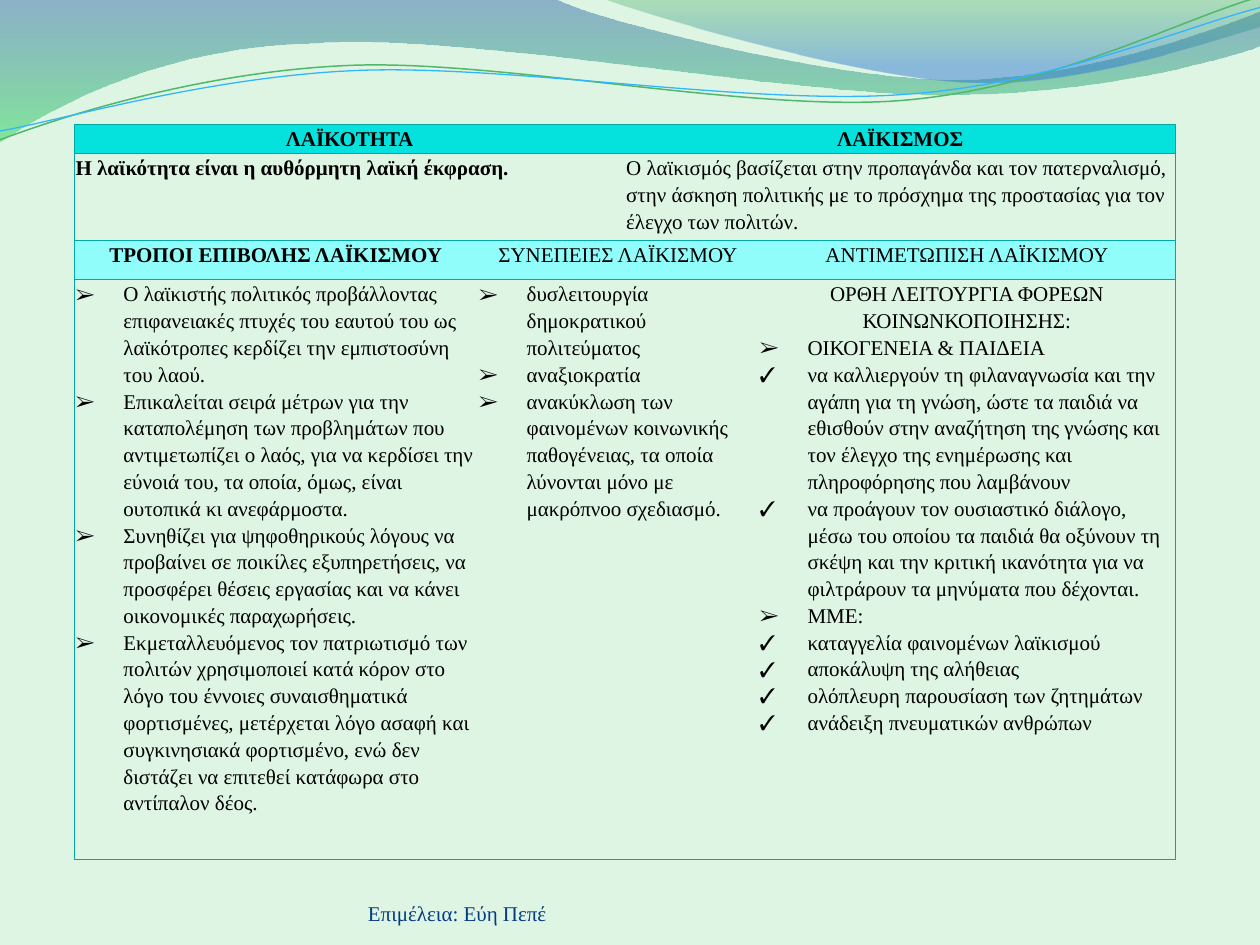
"""Build a slide with a wave header and a table comparing λαϊκότητα and λαϊκισμός."""
from lxml.etree import SubElement
from pptx import Presentation
from pptx.dml.color import RGBColor
from pptx.enum.text import MSO_ANCHOR, PP_ALIGN
from pptx.oxml.ns import qn
from pptx.util import Inches, Pt

FONT = "Times New Roman"
BACKGROUND = RGBColor(0xDE, 0xF5, 0xE4)
BLACK = RGBColor(0x00, 0x00, 0x00)
NAVY = RGBColor(0x07, 0x3B, 0x81)
BORDER = RGBColor(0x01, 0xA8, 0xA4)
HEADER = RGBColor(0x05, 0xE2, 0xDD)
SUBHEADER = RGBColor(0x91, 0xFD, 0xFA)
WAVE_BLUE = RGBColor(0x29, 0x60, 0xA7)
WAVE_LIME = RGBColor(0x35, 0xDA, 0x5E)
WAVE_GREEN = RGBColor(0x36, 0xA7, 0x52)
WAVE_SKY = RGBColor(0x24, 0x72, 0xD3)
LINE_GREEN = RGBColor(0x50, 0xB8, 0x6A)
LINE_BLUE = RGBColor(0x31, 0xB6, 0xFD)


def add_wave(shapes, start, segments, close):
    """Draw line (one point) and cubic (three points) segments as a freeform."""
    builder = shapes.build_freeform(Inches(start[0]), Inches(start[1]), scale=1.0)
    ends = [(Inches(x), Inches(y)) for x, y in (segment[-1] for segment in segments)]
    builder.add_line_segments(ends, close=close)
    shape = builder.convert_to_shape()
    shape.shadow.inherit = False
    for line, segment in zip(list(shape._element.iter(qn("a:lnTo"))), segments):
        if len(segment) == 3:
            curve = line.makeelement(qn("a:cubicBezTo"))
            for x, y in segment:
                SubElement(curve, qn("a:pt"), x=str(Inches(x) - shape.left),
                           y=str(Inches(y) - shape.top))
            line.getparent().replace(line, curve)
    return shape


def format_text(paragraph, text, color=BLACK, bold=False):
    """Write the text of a paragraph with its font."""
    paragraph.text = text
    font_format = {"name": FONT, "size": Pt(12), "bold": bold}
    for name, value in font_format.items():
        setattr(paragraph.font, name, value)
    paragraph.font.color.rgb = color


presentation = Presentation()
presentation.slide_width = Inches(10)
presentation.slide_height = Inches(7.5)
slide = presentation.slides.add_slide(presentation.slide_layouts[6])
slide.background.fill.solid()
slide.background.fill.fore_color.rgb = BACKGROUND

filled_waves = [
    ((0, 0), [
        [(4.4, -0.01)],
        [(4.76, 0.17), (6.64, 0.63), (7.58, 0.63)],
        [(8.53, 0.63), (9.58, 0.26), (10, 0.09)],
        [(10.01, 0.36)],
        [(9.83, 0.44), (8.7, 0.76), (7.46, 0.75)],
        [(6.22, 0.75), (3.82, 0.28), (2.57, 0.34)],
        [(1.29, 0.36), (0.46, 0.83), (-0.01, 1.13)],
    ], [(0, WAVE_BLUE, 45), (1, WAVE_LIME, 55)]),
    ((4.79, -0.01), [
        [(5.09, 0.11), (6.82, 0.62), (7.69, 0.65)],
        [(8.56, 0.69), (9.61, 0.32), (10, 0.21)],
        [(10, 0)],
    ], [(0, WAVE_GREEN, 30), (0.8, WAVE_SKY, 45)]),
]
for start, segments, stops in filled_waves:
    wave = add_wave(slide.shapes, start, segments, True)
    wave.line.fill.background()
    wave.fill.gradient()
    wave.fill.gradient_angle = 270
    for stop, (position, color, opacity) in zip(wave.fill.gradient_stops, stops):
        stop.position = position
        stop.color.rgb = color
    colors = wave.fill._xPr.iter(qn("a:srgbClr"))
    for color_element, (position, color, opacity) in zip(colors, stops):
        SubElement(color_element, qn("a:alpha"), val=str(opacity * 1000))

line_waves = [
    ((0, 1.11), [
        [(0.48, 0.93), (1.58, 0.57), (2.77, 0.52)],
        [(3.95, 0.47), (5.93, 0.89), (7.13, 0.8)],
        [(8.33, 0.71), (9.38, 0.15), (9.98, -0.02)],
    ], LINE_GREEN, 0.85),
    ((0, 1.04), [
        [(0.47, 0.96), (1.64, 0.61), (2.83, 0.56)],
        [(4.03, 0.51), (5.97, 0.84), (7.17, 0.75)],
        [(8.36, 0.67), (9.41, 0.21), (10, 0.06)],
    ], LINE_BLUE, 0.75),
]
for start, segments, color, width in line_waves:
    wave = add_wave(slide.shapes, start, segments, False)
    wave.fill.background()
    wave.line.color.rgb = color
    wave.line.width = Pt(width)

credit = slide.shapes.add_textbox(Inches(2.92), Inches(6.95), Inches(3.67), Inches(0.4))
credit_format = {"word_wrap": True, "vertical_anchor": MSO_ANCHOR.BOTTOM, "margin_left": 0,
                 "margin_right": 0, "margin_top": 0, "margin_bottom": 0}
for name, value in credit_format.items():
    setattr(credit.text_frame, name, value)
format_text(credit.text_frame.paragraphs[0], "Επιμέλεια: Εύη Πεπέ", NAVY)

column_widths = [3.2, 1.17, 1.06, 3.31]
row_heights = [0.2, 0.62, 0.31, 3.99]
row_fills = [HEADER, None, SUBHEADER, None]
merges = [(0, 0, 1), (0, 2, 3), (1, 0, 1), (1, 2, 3), (2, 1, 2), (3, 1, 2)]
table = slide.shapes.add_table(
    4, 4, Inches(0.59), Inches(0.99), Inches(8.74), Inches(sum(row_heights))).table
table.first_row = table.horz_banding = False
for column, width in zip(table.columns, column_widths):
    column.width = Inches(width)
for row, height in zip(table.rows, row_heights):
    row.height = Inches(height)
for row_index, first, last in merges:
    table.cell(row_index, first).merge(table.cell(row_index, last))

cell_margins = {"margin_left": Inches(0.01), "margin_right": Inches(0.01),
                "margin_top": 0, "margin_bottom": 0}
for row_index, row in enumerate(table.rows):
    for column_index, cell in enumerate(row.cells):
        for name, value in cell_margins.items():
            setattr(cell, name, value)
        format_text(cell.text_frame.paragraphs[0], "")
        last_column = column_index + cell.span_width - 1 if cell.is_merge_origin else column_index
        visible_borders = {"lnL": column_index == 0, "lnR": last_column == 3,
                           "lnT": True, "lnB": True}
        for tag, visible in visible_borders.items():
            border = SubElement(cell._tc.get_or_add_tcPr(), qn(f"a:{tag}"), w=str(Pt(0.75)))
            if visible:
                solid = SubElement(border, qn("a:solidFill"))
                SubElement(solid, qn("a:srgbClr"), val=str(BORDER))
            else:
                SubElement(border, qn("a:noFill"))
        if row_fills[row_index]:
            cell.fill.solid()
            cell.fill.fore_color.rgb = row_fills[row_index]
        else:
            cell.fill.background()

LEFT, CENTER, ARROW, CHECK = "left", "center", "➢", "✓"
contents = [
    (0, 0, True, [(CENTER, "ΛΑΪΚΟΤΗΤΑ")]),
    (0, 2, True, [(CENTER, "ΛΑΪΚΙΣΜΟΣ")]),
    (1, 0, True, [(LEFT, "Η λαϊκότητα είναι η αυθόρμητη λαϊκή έκφραση.")]),
    (1, 2, False, [(LEFT, "Ο λαϊκισμός βασίζεται στην προπαγάνδα και τον πατερναλισμό, στην άσκηση "
                          "πολιτικής με το πρόσχημα της προστασίας για τον έλεγχο των πολιτών.")]),
    (2, 0, True, [(CENTER, "ΤΡΟΠΟΙ ΕΠΙΒΟΛΗΣ ΛΑΪΚΙΣΜΟΥ")]),
    (2, 1, False, [(CENTER, "ΣΥΝΕΠΕΙΕΣ ΛΑΪΚΙΣΜΟΥ")]),
    (2, 3, False, [(CENTER, "ΑΝΤΙΜΕΤΩΠΙΣΗ ΛΑΪΚΙΣΜΟΥ")]),
    (3, 0, False, [
        (ARROW, "Ο λαϊκιστής πολιτικός προβάλλοντας επιφανειακές πτυχές του εαυτού του ως "
                "λαϊκότροπες κερδίζει την εμπιστοσύνη του λαού."),
        (ARROW, "Επικαλείται σειρά μέτρων για την καταπολέμηση των προβλημάτων που αντιμετωπίζει "
                "ο λαός, για να κερδίσει την εύνοιά του, τα οποία, όμως, είναι ουτοπικά κι "
                "ανεφάρμοστα."),
        (ARROW, "Συνηθίζει για ψηφοθηρικούς λόγους να προβαίνει σε ποικίλες εξυπηρετήσεις, να "
                "προσφέρει θέσεις εργασίας και να κάνει οικονομικές παραχωρήσεις."),
        (ARROW, "Εκμεταλλευόμενος τον πατριωτισμό των πολιτών χρησιμοποιεί κατά κόρον στο λόγο "
                "του έννοιες συναισθηματικά φορτισμένες, μετέρχεται λόγο ασαφή και συγκινησιακά "
                "φορτισμένο, ενώ δεν διστάζει να επιτεθεί κατάφωρα στο αντίπαλον δέος.")]),
    (3, 1, False, [
        (ARROW, "δυσλειτουργία δημοκρατικού πολιτεύματος"),
        (ARROW, "αναξιοκρατία"),
        (ARROW, "ανακύκλωση των φαινομένων κοινωνικής παθογένειας, τα οποία λύνονται μόνο με "
                "μακρόπνοο σχεδιασμό.")]),
    (3, 3, False, [
        (CENTER, "ΟΡΘΗ ΛΕΙΤΟΥΡΓΙΑ ΦΟΡΕΩΝ ΚΟΙΝΩΝΚΟΠΟΙΗΣΗΣ:"),
        (ARROW, "ΟΙΚΟΓΕΝΕΙΑ & ΠΑΙΔΕΙΑ"),
        (CHECK, "να καλλιεργούν τη φιλαναγνωσία και την αγάπη για τη γνώση, ώστε τα παιδιά να "
                "εθισθούν στην αναζήτηση της γνώσης και τον έλεγχο της ενημέρωσης και "
                "πληροφόρησης που λαμβάνουν"),
        (CHECK, "να προάγουν τον ουσιαστικό διάλογο, μέσω του οποίου τα παιδιά θα οξύνουν τη "
                "σκέψη και την κριτική ικανότητα για να φιλτράρουν τα μηνύματα που δέχονται."),
        (ARROW, "ΜΜΕ:"),
        (CHECK, "καταγγελία φαινομένων λαϊκισμού"),
        (CHECK, "αποκάλυψη της αλήθειας"),
        (CHECK, "ολόπλευρη παρουσίαση των ζητημάτων"),
        (CHECK, "ανάδειξη πνευματικών ανθρώπων")]),
]
for row_index, column_index, bold, items in contents:
    text_frame = table.cell(row_index, column_index).text_frame
    text_frame.clear()
    for index, (kind, text) in enumerate(items):
        paragraph = text_frame.add_paragraph() if index else text_frame.paragraphs[0]
        properties = paragraph._p.get_or_add_pPr()
        properties.clear()
        paragraph.line_spacing = 1.15
        paragraph.alignment = PP_ALIGN.CENTER if kind == CENTER else PP_ALIGN.LEFT
        if kind in (ARROW, CHECK):
            properties.set("marL", str(Inches(0.38)))
            properties.set("indent", str(-Inches(0.38)))
            SubElement(properties, qn("a:buFont"), typeface=FONT)
            SubElement(properties, qn("a:buChar"), char=kind)
        format_text(paragraph, text, bold=bold)

presentation.save("out.pptx")
